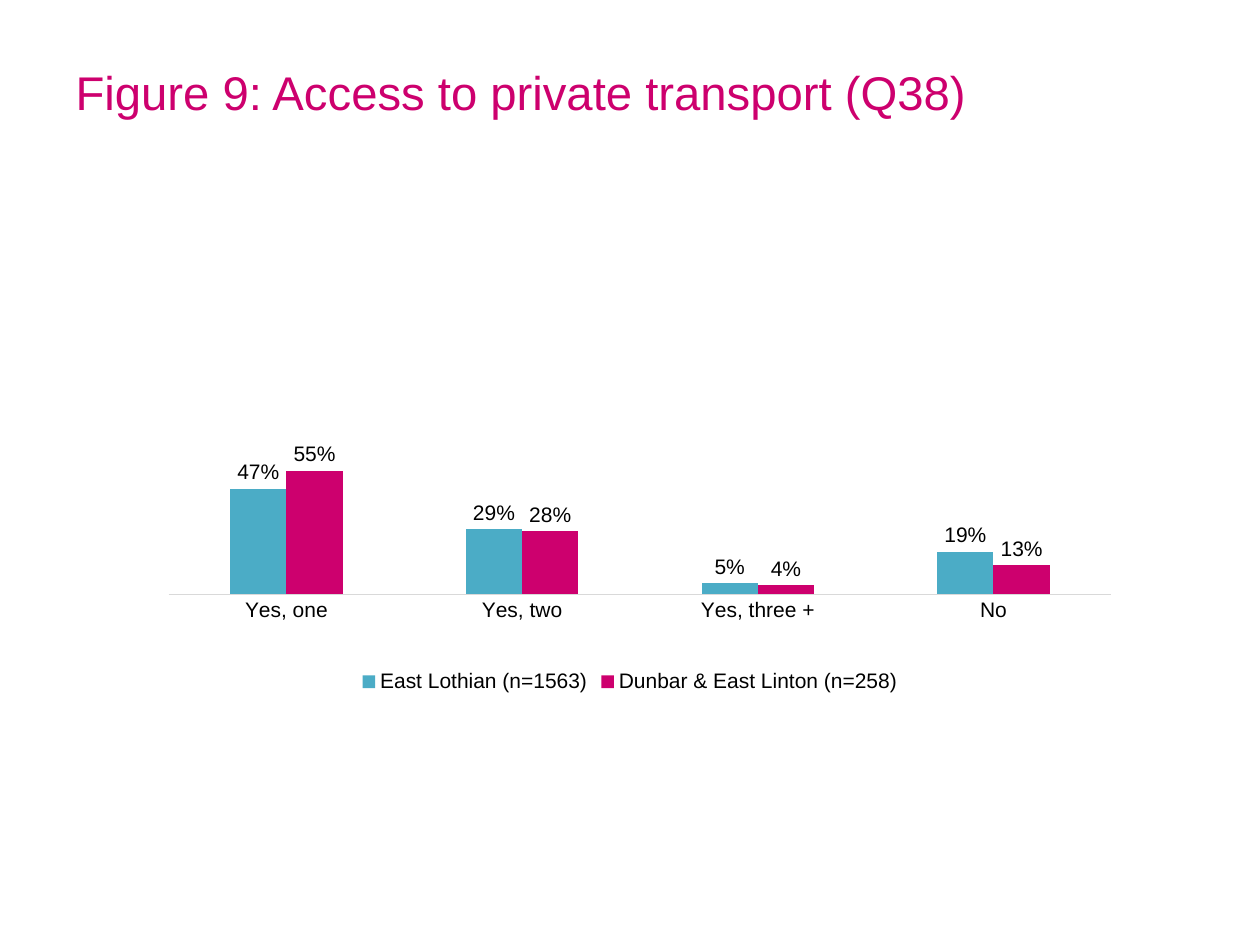
from lxml import etree
from pptx import Presentation
from pptx import util as u
from pptx.chart.data import CategoryChartData
from pptx.dml.color import RGBColor
from pptx.enum import chart as ch
from pptx.enum import text
from pptx.oxml.ns import qn

WIDTH, HEIGHT = u.Inches(10), u.Inches(7.5)
FONT = "Arial"
COLORS = {"teal": "4BACC6", "magenta": "CD006E", "text": "000000", "axis": "D9D9D9"}
CATEGORIES = ["Yes, one", "Yes, two", "Yes, three +", "No"]
SERIES = [
    ("East Lothian (n=1563)", (0.47, 0.29, 0.05, 0.19), "teal"),
    ("Dunbar & East Linton (n=258)", (0.55, 0.28, 0.04, 0.13), "magenta"),
]


def color(name):
    """Return a named colour of the palette."""
    return RGBColor.from_string(COLORS[name])


def style_font(font, size, name):
    """Set typeface, size and colour of a font."""
    font.name, font.size = FONT, u.Pt(size)
    font.color.rgb = color(name)


def add_title(slide, wording):
    """Place and format the slide title."""
    title = slide.shapes.title
    title.left, title.top = int(WIDTH * 0.05), int(HEIGHT * 0.04)
    title.width, title.height = int(WIDTH * 0.9), u.Inches(0.85)
    frame = title.text_frame
    frame.text = wording
    frame.vertical_anchor = text.MSO_ANCHOR.MIDDLE
    paragraph = frame.paragraphs[0]
    paragraph.alignment = text.PP_ALIGN.LEFT
    style_font(paragraph.font, 27, "magenta")


def set_plot_layout(chart, **shares):
    """Fix the inner plot area as shares of the chart's size."""
    area = chart.element.find(".//" + qn("c:plotArea"))
    for old in area.findall(qn("c:layout")):
        area.remove(old)
    layout = etree.Element(qn("c:layout"))
    manual = etree.SubElement(layout, qn("c:manualLayout"))
    values = {"layoutTarget": "inner", "xMode": "edge", "yMode": "edge", **shares}
    for tag, value in values.items():
        etree.SubElement(manual, qn(f"c:{tag}")).set("val", str(value))
    area.insert(0, layout)


def style_axes(chart):
    """Show a plain category axis and hide the percentage axis."""
    categories, values = chart.category_axis, chart.value_axis
    categories.major_tick_mark = ch.XL_TICK_MARK.NONE
    categories.format.line.color.rgb = color("axis")
    categories.format.line.width = u.Pt(0.75)
    style_font(categories.tick_labels.font, 12, "text")
    values.minimum_scale, values.maximum_scale = 0, 1
    values.has_major_gridlines = False
    values.visible = False


def style_series(series, name):
    """Fill the columns and label them above with percentages."""
    series.format.fill.solid()
    series.format.fill.fore_color.rgb = color(name)
    labels = series.data_labels
    labels.show_value = True
    labels.position = ch.XL_LABEL_POSITION.OUTSIDE_END
    labels.number_format, labels.number_format_is_linked = "0%", False
    style_font(labels.font, 12, "text")


def add_column_chart(slide):
    """Add the clustered columns comparing both areas."""
    data = CategoryChartData(number_format="0%")
    data.categories = CATEGORIES
    for name, values, _ in SERIES:
        data.add_series(name, values)
    chart = slide.shapes.add_chart(
        ch.XL_CHART_TYPE.COLUMN_CLUSTERED,
        u.Inches(1.02), u.Inches(1.97), u.Inches(7.96), u.Inches(3.57), data,
    ).chart
    style_font(chart.font, 12, "text")
    chart.has_title = False
    chart.has_legend = True
    chart.legend.position = ch.XL_LEGEND_POSITION.BOTTOM
    chart.legend.include_in_layout = False
    style_font(chart.legend.font, 12, "text")
    style_axes(chart)
    plot = chart.plots[0]
    plot.gap_width, plot.overlap = 219, 0
    plot.vary_by_categories = False
    for series, (_, _, name) in zip(plot.series, SERIES):
        style_series(series, name)
    set_plot_layout(chart, x=0.04, y=0.27, w=0.94, h=0.5)


def main():
    """Build and save the slide."""
    presentation = Presentation()
    presentation.slide_width, presentation.slide_height = WIDTH, HEIGHT
    slide = presentation.slides.add_slide(presentation.slide_layouts[5])
    add_title(slide, "Figure 9: Access to private transport (Q38)")
    add_column_chart(slide)
    presentation.save("out.pptx")


if __name__ == "__main__":
    main()
